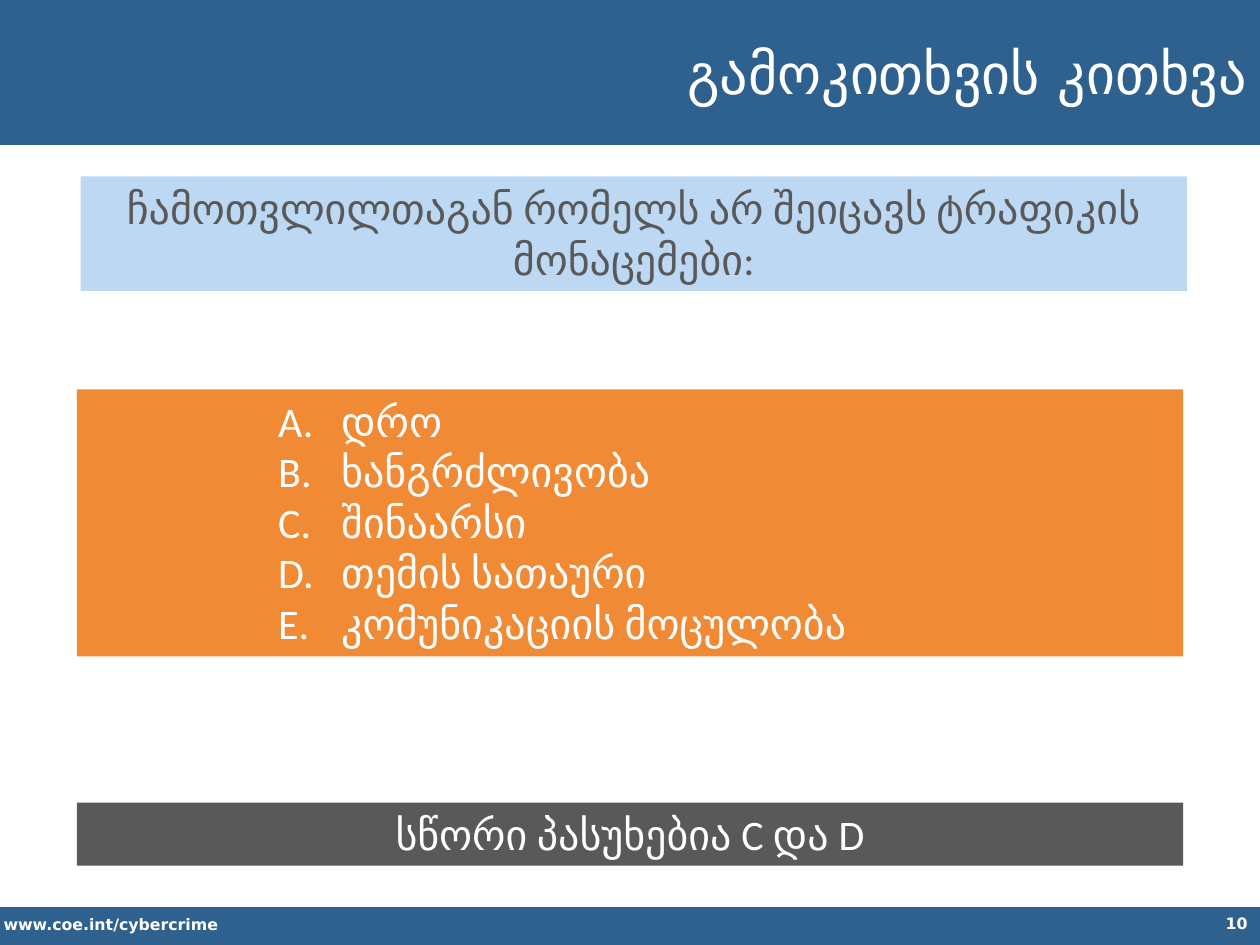
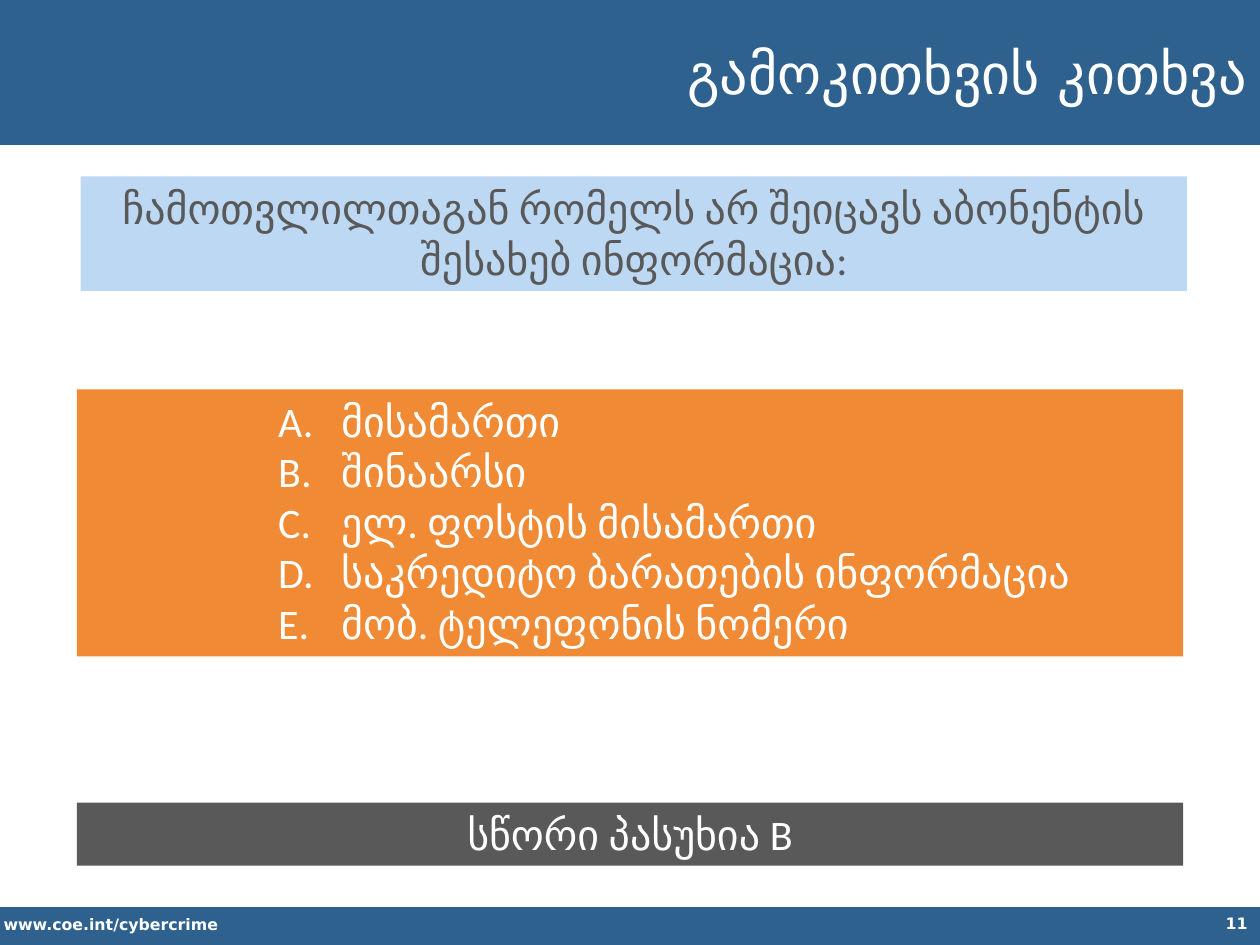
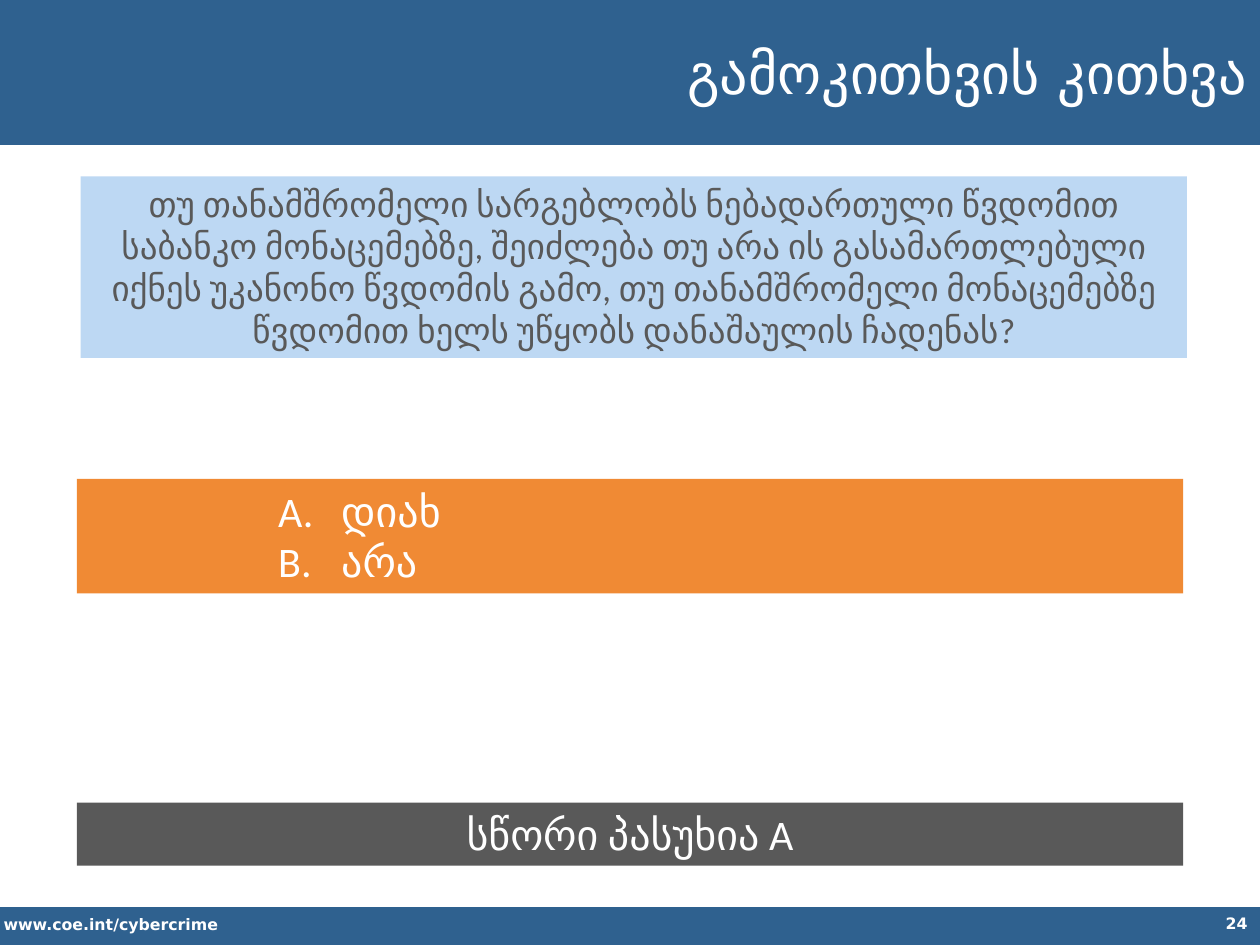
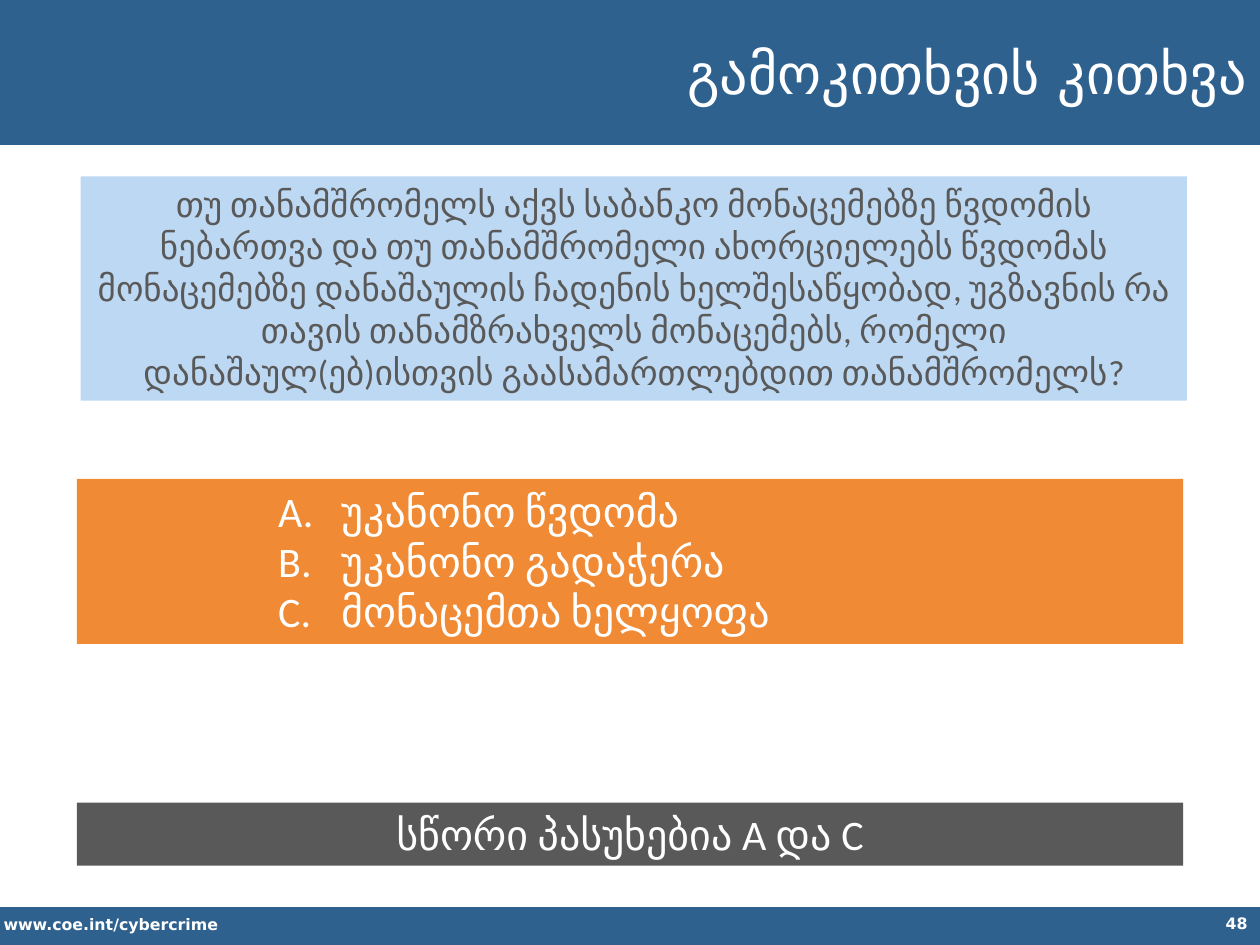
from dataclasses import dataclass

from lxml.etree import SubElement
from pptx import Presentation
from pptx.dml.color import RGBColor
from pptx.enum.shapes import MSO_SHAPE
from pptx.enum.text import MSO_ANCHOR, MSO_AUTO_SIZE, PP_ALIGN
from pptx.oxml.ns import qn
from pptx.util import Inches, Pt

# Content
TITLE = "გამოკითხვის კითხვა"
SITE = "www.coe.int/cybercrime"
QUIZ = [
    {
        "page": "10",
        "ask": "ჩამოთვლილთაგან რომელს არ შეიცავს ტრაფიკის მონაცემები:",
        "size": 24, "lines": 2, "top": 3.09,
        "picks": ["დრო", "ხანგრძლივობა", "შინაარსი", "თემის სათაური",
                  "კომუნიკაციის მოცულობა"],
        "key": "სწორი პასუხებია C და D",
    },
    {
        "page": "11",
        "ask": "ჩამოთვლილთაგან რომელს არ შეიცავს აბონენტის შესახებ ინფორმაცია:",
        "size": 24, "lines": 2, "top": 3.09,
        "picks": ["მისამართი", "შინაარსი", "ელ. ფოსტის მისამართი",
                  "საკრედიტო ბარათების ინფორმაცია", "მობ. ტელეფონის ნომერი"],
        "key": "სწორი პასუხია B",
    },
    {
        "page": "24",
        "ask": "თუ თანამშრომელი სარგებლობს ნებადართული წვდომით საბანკო "
               "მონაცემებზე, შეიძლება თუ არა ის გასამართლებული იქნეს უკანონო "
               "წვდომის გამო, თუ თანამშრომელი მონაცემებზე წვდომით ხელს უწყობს "
               "დანაშაულის ჩადენას?",
        "size": 20, "lines": 4, "top": 3.8,
        "picks": ["დიახ", "არა"],
        "key": "სწორი პასუხია A",
    },
    {
        "page": "48",
        "ask": "თუ თანამშრომელს აქვს საბანკო მონაცემებზე წვდომის ნებართვა და "
               "თუ თანამშრომელი ახორციელებს წვდომას მონაცემებზე დანაშაულის "
               "ჩადენის ხელშესაწყობად, უგზავნის რა თავის თანამზრახველს "
               "მონაცემებს, რომელი დანაშაულ(ებ)ისთვის გაასამართლებდით "
               "თანამშრომელს?",
        "size": 20, "lines": 5, "top": 3.8,
        "picks": ["უკანონო წვდომა", "უკანონო გადაჭერა", "მონაცემთა ხელყოფა"],
        "key": "სწორი პასუხებია A და C",
    },
]


# Theme
@dataclass(frozen=True)
class Theme:
    navy: RGBColor = RGBColor.from_string("2F618F")
    sky: RGBColor = RGBColor.from_string("BDD8F3")
    orange: RGBColor = RGBColor.from_string("F08A34")
    gray: RGBColor = RGBColor.from_string("595959")
    white: RGBColor = RGBColor.from_string("FFFFFF")
    head: str = "DejaVu Sans"
    body: str = "Calibri"
    title: int = 32
    text: int = 24
    foot: int = 9


T = Theme()
LEFT, WIDE = 0.61, 8.78


# Helpers
def place(shape, left, top, width, height):
    shape.left, shape.top = Inches(left), Inches(top)
    shape.width, shape.height = Inches(width), Inches(height)


def tall(lines, size):
    """Height in inches of a box holding this many lines."""
    return round(0.1 + lines * size * 0.0168, 2)


def paint(shape, color):
    shape.fill.solid()
    shape.fill.fore_color.rgb = color
    shape.line.fill.background()


def write(para, text, size, color, face, align=PP_ALIGN.LEFT, bold=False):
    para.alignment = align
    run = para.add_run()
    run.text = text
    font = run.font
    font.size, font.name, font.bold = Pt(size), face, bold
    font.color.rgb = color


def number(para):
    """Letter a paragraph A., B., C. with a hanging indent."""
    para.level = 3
    props = para._p.get_or_add_pPr()
    props.set("marL", str(Inches(2)))
    props.set("indent", str(Inches(-0.5)))
    SubElement(props, qn("a:buFont"), typeface="+mj-lt")
    SubElement(props, qn("a:buAutoNum"), type="alphaUcPeriod")


def block(slide, color, *box):
    shape = slide.shapes.add_shape(MSO_SHAPE.RECTANGLE, *map(Inches, box))
    shape.shadow.inherit = False
    paint(shape, color)
    return shape


def panel(slide, color, left, top, texts, lines, size, ink, listed=False):
    shape = block(slide, color, left, top, WIDE, tall(lines, size))
    frame = shape.text_frame
    frame.word_wrap = True
    frame.vertical_anchor = MSO_ANCHOR.TOP
    frame.auto_size = MSO_AUTO_SIZE.SHAPE_TO_FIT_TEXT
    for i, text in enumerate(texts):
        para = frame.add_paragraph() if i else frame.paragraphs[0]
        if listed:
            number(para)
        align = PP_ALIGN.LEFT if listed else PP_ALIGN.CENTER
        write(para, text, size, ink, T.body, align)


def label(slide, text, align, *box):
    shape = slide.shapes.add_textbox(*map(Inches, box))
    shape.text_frame.word_wrap = True
    write(shape.text_frame.paragraphs[0], text, T.foot, T.white, T.head,
          align, True)
    return shape


# Shared bands and site address, moved onto the layout
def dress(slide):
    parts = [
        block(slide, T.navy, 0, -0.03, 10, 1.18),
        block(slide, T.navy, 0, 7.2, 10, 0.32),
        label(slide, SITE, PP_ALIGN.LEFT, -0.07, 7.21, 3.52, 0.25),
    ]
    tree = slide.slide_layout.shapes._spTree
    for part in parts:
        tree.append(part._element)


def head(slide):
    title = slide.shapes.title
    place(title, 2.2, 0.07, 7.8, 1.01)
    paint(title, T.navy)
    frame = title.text_frame
    frame.word_wrap = True
    frame.auto_size = MSO_AUTO_SIZE.NONE
    frame.vertical_anchor = MSO_ANCHOR.MIDDLE
    write(frame.paragraphs[0], TITLE, T.title, T.white, T.head,
          PP_ALIGN.RIGHT)


# One quiz slide
def fill(slide, quiz):
    head(slide)
    label(slide, quiz["page"], PP_ALIGN.RIGHT, 7.75, 7.2, 2.25, 0.31)
    panel(slide, T.sky, 0.64, 1.4, [quiz["ask"]], quiz["lines"],
          quiz["size"], T.gray)
    panel(slide, T.gray, LEFT, 6.37, [quiz["key"]], 1, T.text, T.white)
    panel(slide, T.orange, LEFT, quiz["top"], quiz["picks"],
          len(quiz["picks"]), T.text, T.white, listed=True)


def main():
    deck = Presentation()
    deck.slide_width, deck.slide_height = Inches(10), Inches(7.5)
    layout = deck.slide_layouts.get_by_name("Title Only")
    for i, quiz in enumerate(QUIZ):
        slide = deck.slides.add_slide(layout)
        if i == 0:
            dress(slide)
        fill(slide, quiz)
    deck.save("out.pptx")


if __name__ == "__main__":
    main()
